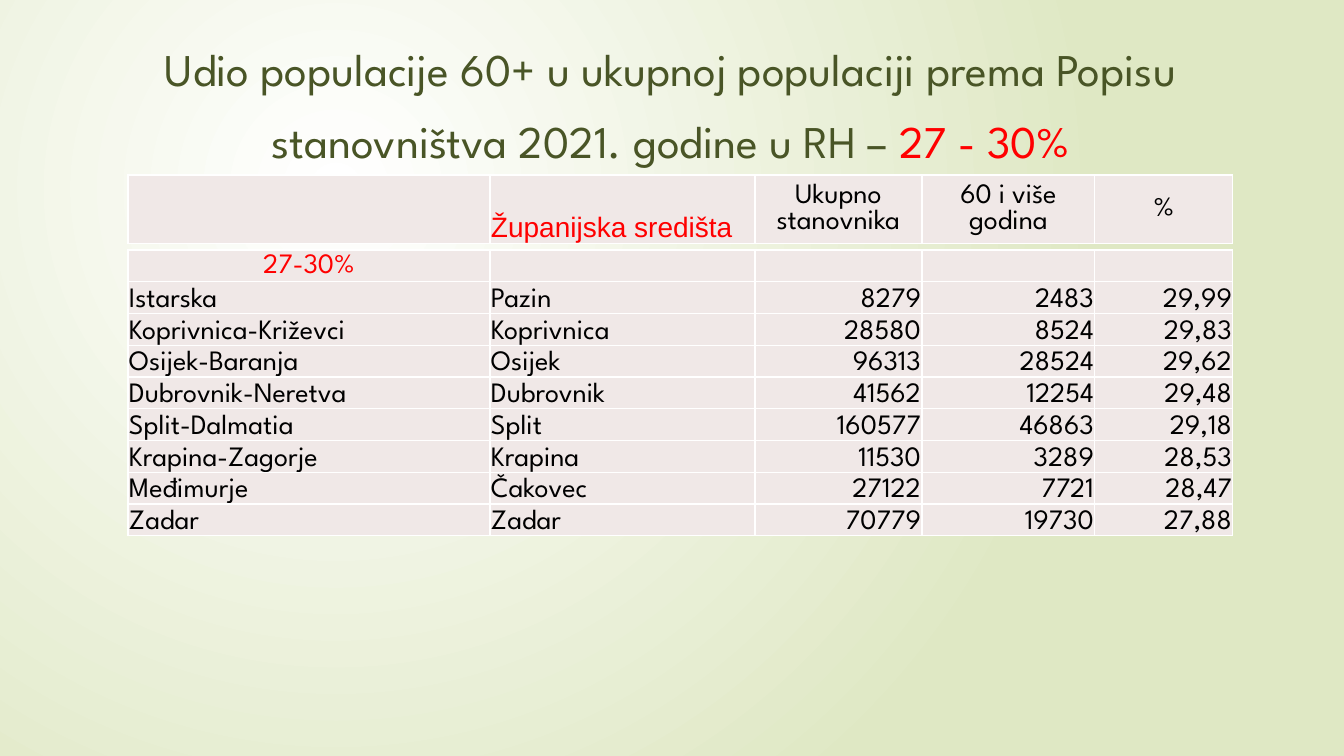
from pptx import Presentation
from pptx.dml.color import RGBColor
from pptx.enum.text import MSO_ANCHOR as Anchor, PP_ALIGN as Align
from pptx.oxml import parse_xml
from pptx.oxml.ns import nsdecls, qn
from pptx.util import Emu, Pt

TITLE = [
    ("Udio populacije 60+ u ukupnoj populaciji prema Popisu "
     "stanovništva 2021. godine u RH – ", "495526"),
    ("27 - 30%", "FF0000"),
]
HEAD = [("", "Županijska središta", "Ukupno stanovnika",
         "60 i više godina", "%")]
ROWS = [
    ("27-30%", "", "", "", ""),
    ("Istarska", "Pazin", "8279", "2483", "29,99"),
    ("Koprivnica-Križevci", "Koprivnica", "28580", "8524", "29,83"),
    ("Osijek-Baranja", "Osijek", "96313", "28524", "29,62"),
    ("Dubrovnik-Neretva", "Dubrovnik", "41562", "12254", "29,48"),
    ("Split-Dalmatia", "Split", "160577", "46863", "29,18"),
    ("Krapina-Zagorje", "Krapina", "11530", "3289", "28,53"),
    ("Međimurje", "Čakovec", "27122", "7721", "28,47"),
    ("Zadar", "Zadar", "70779", "19730", "27,88"),
]
COLS = (362, 265, 167, 173, 138)
LEFT, HEAD_TOP, HEAD_H, BODY_TOP, BODY_H = 128, 175, 53, 250, 286
FONT, RED, BLACK = "League Spartan", "FF0000", "000000"
FILL, LINE, BACK = "F0E8E7", "FFFFFF", "DFE8C4"


def px(n):
    return Emu(round(n * 914400 / 100.8))


def rgb(code):
    return RGBColor.from_string(code)


def set_font(font, size, color, name=FONT):
    font.size, font.name = Pt(size), name
    font.color.rgb = rgb(color)


def paint_back(slide):
    """Fill the background with a round gradient, white at upper left."""
    fill = slide.background.fill
    fill.gradient()
    for stop, code in zip(fill.gradient_stops, (LINE, BACK)):
        stop.color.rgb = rgb(code)
    grad = slide.element.find(".//" + qn("a:gradFill"))
    grad.replace(grad.find(qn("a:lin")), parse_xml(
        f'<a:path {nsdecls("a")} path="circle"><a:fillToRect l="50000" '
        't="50000" r="100000" b="100000"/></a:path>'))


def add_title(slide):
    box = slide.shapes.add_textbox(px(52), px(25), px(1238), px(141))
    frame = box.text_frame
    frame.word_wrap, frame.vertical_anchor = True, Anchor.MIDDLE
    para = frame.paragraphs[0]
    para.alignment, para.line_spacing = Align.CENTER, 1.32
    for text, color in TITLE:
        run = para.add_run()
        run.text = text
        set_font(run.font, 32.4, color)


def style_cell(cell, text, align, anchor, color, name=FONT):
    cell.margin_left = cell.margin_right = cell.margin_top = px(1)
    cell.margin_bottom = 0
    cell.vertical_anchor = anchor
    for side in "LRTB":
        cell._tc.get_or_add_tcPr().append(parse_xml(
            f'<a:ln{side} {nsdecls("a")} w="12700"><a:solidFill>'
            f'<a:srgbClr val="{LINE}"/></a:solidFill></a:ln{side}>'))
    cell.fill.solid()
    cell.fill.fore_color.rgb = rgb(FILL)
    cell.text = text
    para = cell.text_frame.paragraphs[0]
    para.alignment = align
    set_font(para.font, 20, color, name)


def add_grid(slide, rows, top, height, look):
    """Add a table; look(row, col) gives align, anchor, colour and font."""
    grid = slide.shapes.add_table(len(rows), len(COLS), px(LEFT), px(top),
                                  px(sum(COLS)), px(height)).table
    grid.first_row = grid.horz_banding = False
    for col, width in zip(grid.columns, COLS):
        col.width = px(width)
    for r, row in enumerate(rows):
        for c, text in enumerate(row):
            style_cell(grid.cell(r, c), text, *look(r, c))


def head_look(r, c):
    if c < 2:
        return Align.LEFT, Anchor.BOTTOM, RED, "Arial"
    return Align.CENTER, Anchor.MIDDLE, BLACK


def body_look(r, c):
    if r == 0:
        return Align.CENTER, Anchor.MIDDLE, RED
    return Align.LEFT if c < 2 else Align.RIGHT, Anchor.BOTTOM, BLACK


def main():
    deck = Presentation()
    deck.slide_width, deck.slide_height = px(1344), px(756)
    slide = deck.slides.add_slide(deck.slide_layouts[6])
    paint_back(slide)
    add_grid(slide, ROWS, BODY_TOP, BODY_H, body_look)
    add_title(slide)
    add_grid(slide, HEAD, HEAD_TOP, HEAD_H, head_look)
    deck.save("out.pptx")


if __name__ == "__main__":
    main()
